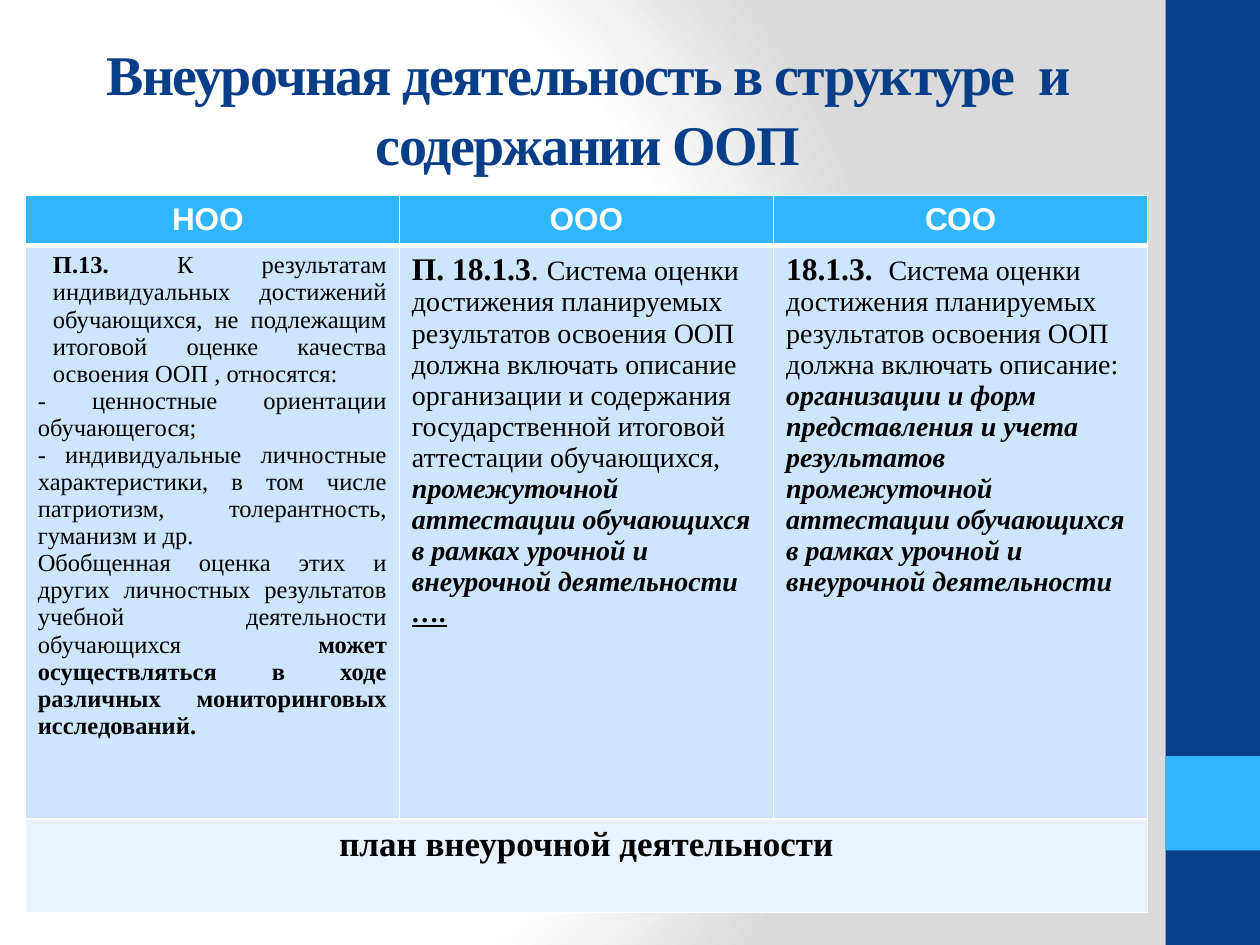
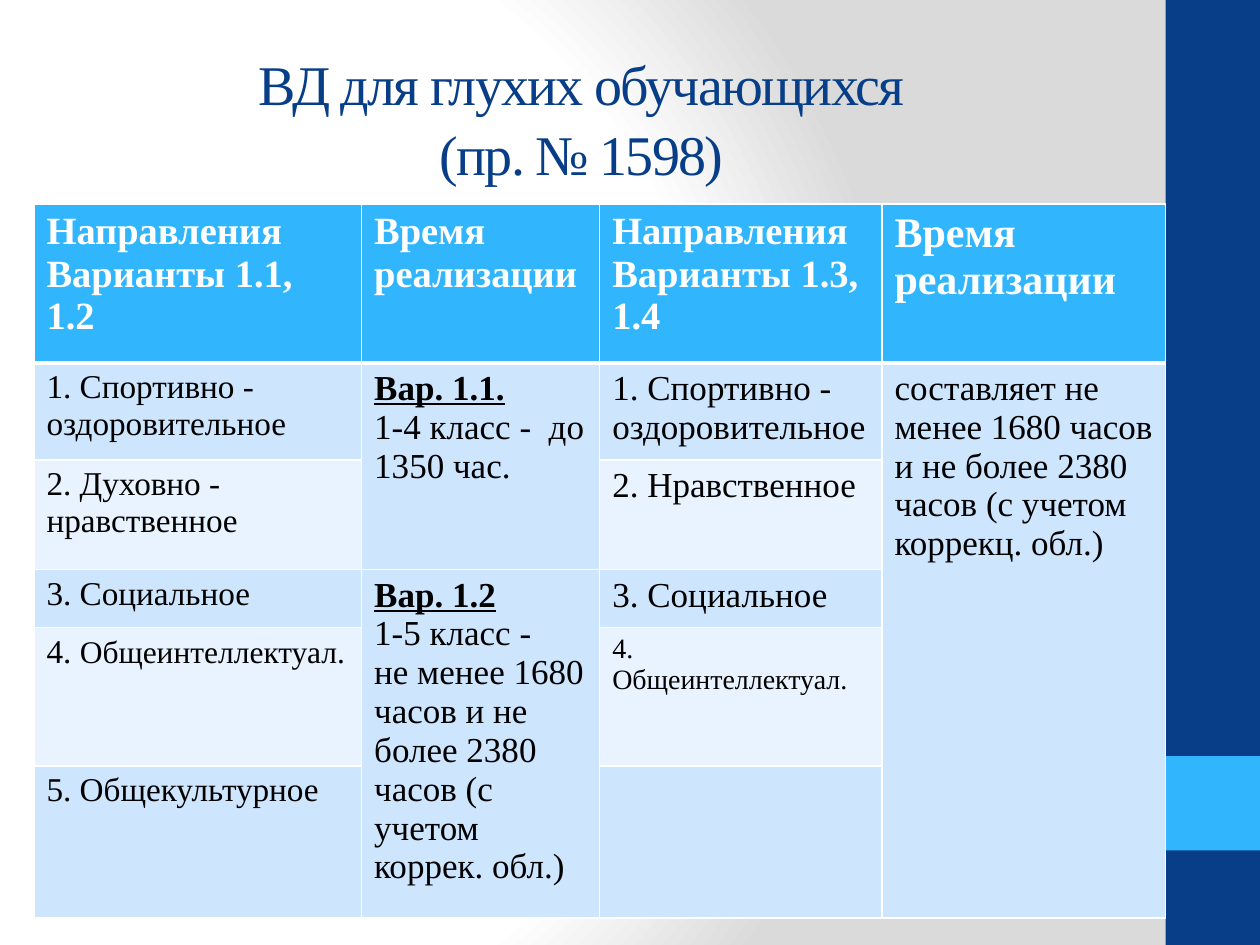
from pptx import Presentation
from pptx.dml.color import RGBColor
from pptx.enum.shapes import MSO_SHAPE as SHAPE
from pptx.enum.text import MSO_ANCHOR as ANCHOR, PP_ALIGN as ALIGN
from pptx.oxml import parse_xml
from pptx.oxml.ns import nsdecls
from pptx.util import Inches, Pt

NAVY = RGBColor(0x07, 0x3E, 0x87)
SKY = RGBColor(0x31, 0xB6, 0xFD)
PALE = RGBColor(0xCE, 0xE5, 0xFE)
MIST = RGBColor(0xE8, 0xF3, 0xFF)
WHITE = RGBColor(0xFF, 0xFF, 0xFF)
GREY = RGBColor(0xDA, 0xDA, 0xDA)
BLACK = RGBColor(0, 0, 0)
SERIF, SANS = "Times New Roman", "Arial"


# Text: a run is (words, size, marks), marks being any of "b", "i", "u"
def write(para, runs, color, font=SERIF, gap=None):
    for words, size, marks in runs:
        for n, line in enumerate(words.split("\n")):
            if n:
                para.add_line_break()
            if not line:
                continue
            run = para.add_run()
            run.text = line
            face = run.font
            face.name, face.size = font, Pt(size)
            face.color.rgb = color
            face.bold = "b" in marks
            face.italic = "i" in marks
            face.underline = "u" in marks
            if gap is not None:
                run._r.get_or_add_rPr().set("spc", str(gap))


def fill_cell(cell, paras, color, font=SERIF, align=ALIGN.LEFT):
    frame = cell.text_frame
    for n, runs in enumerate(paras):
        para = frame.add_paragraph() if n else frame.paragraphs[0]
        para.alignment = align
        write(para, runs, color, font)


# Parts that every slide shares
def backdrop(slide):
    stops = "".join(
        f'<a:gs pos="{pos}"><a:srgbClr val="{color}"/></a:gs>'
        for pos, color in ((0, WHITE), (75000, WHITE), (100000, GREY)))
    slide._element.cSld.insert(0, parse_xml(
        f'<p:bg {nsdecls("p", "a")}><p:bgPr><a:gradFill rotWithShape="1">'
        f'<a:gsLst>{stops}</a:gsLst><a:path path="circle">'
        '<a:fillToRect l="20000" t="50000" r="100000" b="50000"/></a:path>'
        '</a:gradFill><a:effectLst/></p:bgPr></p:bg>'))


def side_band(slide, left, width):
    for top, height, color in ((0, 7.5, NAVY), (6, width, SKY)):
        band = slide.shapes.add_shape(
            SHAPE.RECTANGLE, Inches(left), Inches(top), Inches(width), Inches(height))
        band.shadow.inherit = False
        band.fill.solid()
        band.fill.fore_color.rgb = color
        band.line.fill.background()


def title(slide, words, height, marks=""):
    box = slide.shapes.add_textbox(
        Inches(0.5), Inches(0.3), Inches(8.33), Inches(height))
    frame = box.text_frame
    frame.word_wrap = True
    frame.vertical_anchor = ANCHOR.MIDDLE
    para = frame.paragraphs[0]
    para.alignment = ALIGN.CENTER
    para.line_spacing = 1.04
    write(para, [(words, 32, marks)], NAVY, gap=-100)


def new_slide(prs, words, height, marks=""):
    slide = prs.slides.add_slide(prs.slide_layouts[6])
    backdrop(slide)
    side_band(slide, 9.25, 0.75)
    title(slide, words, height, marks)
    return slide


# Tables
def edge(cell, row):
    props = cell._tc.get_or_add_tcPr()
    widths = {"L": 1, "R": 1, "T": 3 if row == 1 else 1, "B": 1 if row else 3}
    for n, (side, width) in enumerate(widths.items()):
        props.insert(n, parse_xml(
            f'<a:ln{side} {nsdecls("a")} w="{Pt(width)}"><a:solidFill>'
            f'<a:srgbClr val="{WHITE}"/></a:solidFill></a:ln{side}>'))


def grid(slide, left, top, cols, rows, spans):
    table = slide.shapes.add_table(
        len(rows), len(cols), Inches(left), Inches(top),
        Inches(sum(cols)), Inches(sum(rows))).table
    for col, width in zip(table.columns, cols):
        col.width = Inches(width)
    for r, height in enumerate(rows):
        table.rows[r].height = Inches(height)
        for c in range(len(cols)):
            cell = table.cell(r, c)
            cell.fill.solid()
            cell.fill.fore_color.rgb = (PALE if r % 2 else MIST) if r else SKY
            edge(cell, r)
    for start, end in spans:
        table.cell(*start).merge(table.cell(*end))
    return table


# Slide 1: three school levels over one shared plan
def levels(prs):
    slide = new_slide(
        prs, "Внеурочная деятельность в структуре  и содержании ООП", 1.09, "b")
    table = grid(slide, 0.2, 1.55, [2.97] * 3, [0.38, 4.55, 0.74],
                 [((2, 0), (2, 2))])
    for c, name in enumerate(("НОО ", "ООО", "СОО")):
        fill_cell(table.cell(0, c), [[(name, 18, "b")]], WHITE, SANS, ALIGN.CENTER)

    primary = table.cell(1, 0)
    fill_cell(primary, [
        [("П.13. ", 14, "b"),
         ("К результатам индивидуальных достижений обучающихся, не подлежащим "
          "итоговой оценке качества освоения ООП , относятся:", 14, "")],
        [("- ценностные ориентации обучающегося;", 14, "")],
        [("- индивидуальные личностные характеристики, в том числе патриотизм, "
          "толерантность, гуманизм и др.", 14, "")],
        [("Обобщенная оценка этих и других личностных результатов учебной "
          "деятельности обучающихся ", 14, ""),
         ("может осуществляться в ходе различных мониторинговых исследований.",
          14, "b")],
    ], BLACK, align=ALIGN.JUSTIFY)
    first = primary.text_frame.paragraphs[0]
    first._p.get_or_add_pPr().set("marL", str(Inches(0.12)))

    system = ("Система оценки достижения планируемых результатов освоения ООП "
              "должна включать описание")
    stage = ("промежуточной аттестации обучающихся в рамках урочной и "
             "внеурочной деятельности")
    fill_cell(table.cell(1, 1), [[
        ("П. 18.1.3", 18, "b"), (". ", 18, ""),
        (system + " организации и содержания государственной итоговой "
         "аттестации обучающихся, ", 16, ""),
        (stage, 16, "bi"), (" ….", 16, "biu")]], BLACK)
    fill_cell(table.cell(1, 2), [[
        ("18.1.3.  ", 18, "b"), (system + ":\n", 16, ""),
        ("организации и форм представления и учета результатов " + stage,
         16, "bi")]], BLACK)
    fill_cell(table.cell(2, 0), [[("план внеурочной деятельности", 20, "b")]],
              BLACK, align=ALIGN.CENTER)


# Slide 2: directions and hours by variant
def hours(prs):
    slide = new_slide(prs, "ВД для глухих обучающихся \n(пр. № 1598) ", 1.25)
    table = grid(slide, 0.27, 1.62, [2.6, 1.89, 2.24, 2.25],
                 [1.26, 0.77, 0.87, 0.46, 1.1, 1.01],
                 [((1, 1), (2, 1)), ((3, 1), (5, 1)), ((1, 3), (5, 3))])
    heads = (
        (22, "Направления", "Варианты 1.1, 1.2"), (22, "Время реализации"),
        (22, "Направления", "Варианты 1.3, 1.4"), (24, "Время реализации"))
    for c, (size, *lines) in enumerate(heads):
        fill_cell(table.cell(0, c), [[(line, size, "b")] for line in lines], WHITE)

    sport, social = "1. Спортивно - оздоровительное", "3. Социальное"
    lists = {
        0: ([(sport, 19, "")], [("2. Духовно - нравственное", 19, "")],
            [(social, 19, "")],
            [("4. ", 19, ""), ("Общеинтеллектуал.", 18, "")],
            [("5. Общекультурное", 19, "")]),
        2: ([(sport, 20, "")], [("2. Нравственное", 20, "")],
            [(social, 20, "")], [("4.  Общеинтеллектуал.", 16, "")]),
    }
    for c, items in lists.items():
        for r, runs in enumerate(items, 1):
            fill_cell(table.cell(r, c), [runs], BLACK)

    span = "не менее 1680 часов и не более 2380 часов (с учетом "
    times = {
        (1, 1): [("Вар. 1.1.", "bu"), ("1-4 класс -  до 1350 час.", "")],
        (3, 1): [("Вар. 1.2", "bu"), ("1-5 класс -", ""),
                 (span + "коррек. обл.)", "")],
        (1, 3): [("составляет " + span + "коррекц. обл.)", "")],
    }
    for spot, lines in times.items():
        fill_cell(table.cell(*spot),
                  [[(words, 20, marks)] for words, marks in lines], BLACK)


def main():
    prs = Presentation()
    prs.slide_width, prs.slide_height = Inches(10), Inches(7.5)
    levels(prs)
    hours(prs)
    prs.save("out.pptx")


if __name__ == "__main__":
    main()
